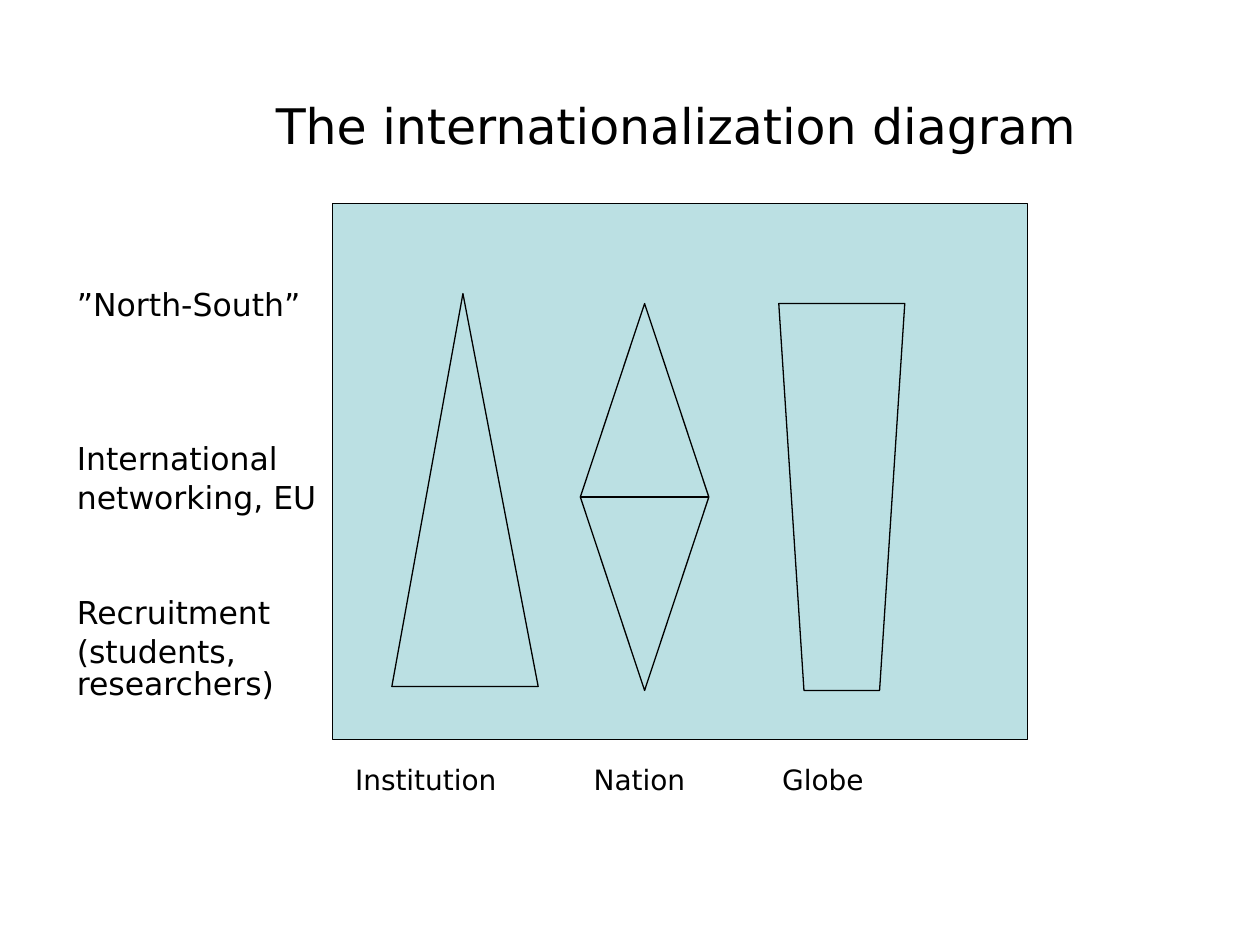
from lxml import etree
from pptx import Presentation
from pptx.dml.color import RGBColor
from pptx.enum.shapes import MSO_SHAPE
from pptx.enum.text import MSO_AUTO_SIZE
from pptx.oxml.ns import qn
from pptx.util import Cm, Pt

BLACK = RGBColor(0x00, 0x00, 0x00)
PALE_TEAL = RGBColor(0xBB, 0xE0, 0xE3)
FONT = "DejaVu Sans"

# (preset, left, top, width, height, adjustments), in cm
SHAPES = [
    (MSO_SHAPE.RECTANGLE, 6.71, 4.11, 14, 10.8, []),
    (MSO_SHAPE.ISOSCELES_TRIANGLE, 7.9, 5.92, 2.95, 7.92, [0.486]),
    (MSO_SHAPE.FLOWCHART_MANUAL_OPERATION, 15.7, 6.12, 2.54, 7.8, []),
    (MSO_SHAPE.FLOWCHART_SORT, 11.7, 6.12, 2.59, 7.8, []),
]

TITLE = "The internationalization diagram"
COLUMNS = ["Institution", "Nation", "Globe"]
COLUMN_TABS = [4.81, 8.61]  # cm from the first label
# (text, space before in points)
ROWS = [
    ("”North-South”", 0),
    ("International", 69.7),
    ("networking, EU", 3.6),
    ("Recruitment", 47.7),
    ("(students, researchers)", 3.6),
]


def add_tabs(p, stops):
    tabs = etree.SubElement(p._p.get_or_add_pPr(), qn("a:tabLst"))
    for stop in stops:
        etree.SubElement(tabs, qn("a:tab"), pos=str(Cm(stop)), algn="l")


def add_text(slide, box, lines, size, tabs=()):
    tf = slide.shapes.add_textbox(*map(Cm, box)).text_frame
    tf.word_wrap = True
    tf.auto_size = MSO_AUTO_SIZE.SHAPE_TO_FIT_TEXT
    for i, (text, before) in enumerate(lines):
        p = tf.add_paragraph() if i else tf.paragraphs[0]
        if tabs:
            add_tabs(p, tabs)
        p.line_spacing = 0.85
        p.space_before = Pt(before)
        r = p.add_run()
        r.text = text
        for name, value in {"name": FONT, "size": Pt(size)}.items():
            setattr(r.font, name, value)
        r.font.color.rgb = BLACK


def main():
    prs = Presentation()
    prs.slide_width, prs.slide_height = Cm(25.4), Cm(19.05)
    slide = prs.slides.add_slide(prs.slide_layouts[6])

    for preset, left, top, width, height, adjustments in SHAPES:
        s = slide.shapes.add_shape(preset, Cm(left), Cm(top), Cm(width), Cm(height))
        for i, value in enumerate(adjustments):
            s.adjustments[i] = value
        s.shadow.inherit = False
        s.fill.solid()
        s.fill.fore_color.rgb = PALE_TEAL
        s.line.color.rgb = BLACK
        s.line.width = Pt(0.75)

    add_text(slide, (6.91, 15.35, 13.79, 0.84), [("\t".join(COLUMNS), 0)], 16, COLUMN_TABS)
    add_text(slide, (1.3, 5.74, 5.59, 8.84), ROWS, 18)
    add_text(slide, (5.31, 1.98, 18.19, 1.27), [(TITLE, 0)], 28)

    prs.save("out.pptx")


if __name__ == "__main__":
    main()
